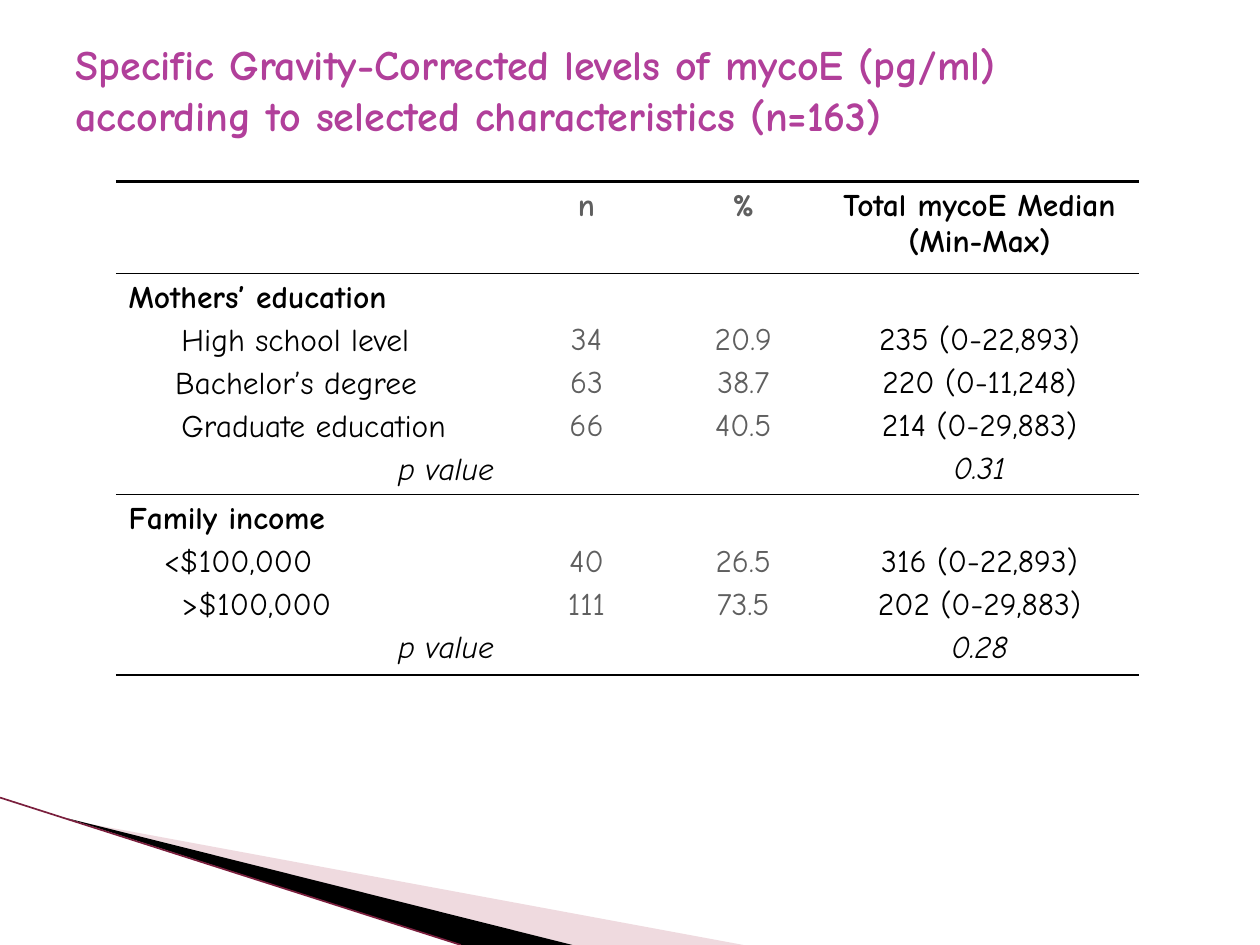
from collections import namedtuple

from lxml.etree import SubElement
from pptx import Presentation
from pptx.dml.color import RGBColor
from pptx.enum.shapes import MSO_CONNECTOR as Connector
from pptx.enum.text import MSO_ANCHOR as Anchor, PP_ALIGN as Align
from pptx.oxml.ns import qn
from pptx.util import Inches, Pt

Box = namedtuple("Box", "left top width height")
Line = namedtuple("Line", "text indent bold italic align", defaults=(0, False, False, Align.LEFT))

FONT = "Comic Neue"
BLACK, GREY, PURPLE = "000000", "5F5F5F", "B13F9A"
WIDTH, HEIGHT = Inches(10), Inches(7.5)
PARA_GAP = Pt(3.8)
CELL_PAD, LINE_PITCH = 0.05, 0.34
COLUMNS = [3.1, 1.12, 1.17, 2.69]
ROWS = [0.73, 1.96, 1.62]
COLUMN_COLORS = [BLACK, GREY, GREY, BLACK]
HEADERS = ["n", "%", "Total mycoE Median (Min-Max)"]
GROUPS = [
    (
        "Mothers’ education",
        [
            ("High school level", 0.42, "34", "20.9", "235 (0-22,893)"),
            ("Bachelor’s degree", 0.37, "63", "38.7", "220 (0-11,248)"),
            ("Graduate education", 0.42, "66", "40.5", "214 (0-29,883)"),
        ],
        "0.31",
    ),
    (
        "Family income",
        [
            ("<$100,000", 0.28, "40", "26.5", "316 (0-22,893)"),
            (">$100,000", 0.42, "111", "73.5", "202 (0-29,883)"),
        ],
        "0.28",
    ),
]


def color(value):
    return RGBColor.from_string(value)


def place(box):
    return (
        int(box.left * WIDTH),
        int(box.top * HEIGHT),
        int(box.width * WIDTH),
        int(box.height * HEIGHT),
    )


def add_span(para, text, size, shade, bold=False, italic=False):
    span = para.add_run()
    span.text = text
    span.font.name = FONT
    span.font.size = Pt(size)
    span.font.bold = bold
    span.font.italic = italic
    span.font.color.rgb = color(shade)


def add_wedge(page, box, points, shade, opacity=100):
    left, top, width, height = place(box)
    corners = [(int(left + x * width), int(top + y * height)) for x, y in points]
    builder = page.shapes.build_freeform(*corners[0])
    builder.add_line_segments(corners[1:], close=True)
    wedge = builder.convert_to_shape()
    wedge.shadow.inherit = False
    wedge.fill.solid()
    wedge.fill.fore_color.rgb = color(shade)
    wedge.line.fill.background()
    if opacity < 100:
        fill = wedge.fill._xPr.find(qn("a:solidFill"))
        SubElement(fill[0], qn("a:alpha"), val=str(opacity * 1000))


def add_swoosh(page, box):
    left, top, width, height = place(box)
    add_wedge(page, box, [(0.09, 0.15), (1, 1), (0.77, 1)], "D8A3AF", 40)
    add_wedge(page, box, [(0.09, 0.14), (0.77, 1), (0.62, 1)], BLACK)
    edge = page.shapes.add_connector(
        Connector.STRAIGHT, left, top, left + int(0.62 * width), top + height
    )
    edge.line.color.rgb = color("7A1F3D")
    edge.line.width = Pt(0.95)
    SubElement(edge._element.spPr, qn("a:effectLst"))


def add_title(page, box, text):
    title = page.shapes.title
    title.left, title.top, title.width, title.height = place(box)
    frame = title.text_frame
    frame.word_wrap = True
    frame.vertical_anchor = Anchor.MIDDLE
    para = frame.paragraphs[0]
    para.alignment = Align.LEFT
    add_span(para, text, 24, PURPLE, bold=True)


def set_borders(cell, top, bottom):
    properties = cell._tc.get_or_add_tcPr()
    for side, points in (("L", 0), ("R", 0), ("T", top), ("B", bottom)):
        edge = SubElement(properties, qn(f"a:ln{side}"), w=str(Pt(points)))
        if points:
            fill = SubElement(edge, qn("a:solidFill"))
            SubElement(fill, qn("a:srgbClr"), val=BLACK)
        else:
            SubElement(edge, qn("a:noFill"))


def fill_cell(cell, lines, shade, skipped=0):
    cell.fill.background()
    cell.margin_top = Inches(CELL_PAD + skipped * LINE_PITCH)
    frame = cell.text_frame
    for index, line in enumerate(lines):
        para = frame.add_paragraph() if index else frame.paragraphs[0]
        para.alignment = line.align
        if index:
            para.space_before = PARA_GAP
        if line.indent:
            para._p.get_or_add_pPr().set("marL", str(Inches(line.indent)))
        add_span(para, line.text, 18, shade, line.bold, line.italic)


def group_columns(heading, entries, p_value):
    labels = [Line(heading, bold=True)]
    labels += [Line(entry[0], entry[1]) for entry in entries]
    labels.append(Line("p value", italic=True, align=Align.RIGHT))
    values = [
        [Line(entry[field], align=Align.CENTER) for entry in entries] for field in (2, 3, 4)
    ]
    values[-1].append(Line(p_value, italic=True, align=Align.CENTER))
    return [labels] + values


def add_results(page, box):
    frame = page.shapes.add_table(len(ROWS), len(COLUMNS), *place(box))
    table = frame.table
    table.first_row = table.horz_banding = False
    for column, share in zip(table.columns, COLUMNS):
        column.width = int(frame.width * share / sum(COLUMNS))
    for row, share in zip(table.rows, ROWS):
        row.height = int(frame.height * share / sum(ROWS))
    header = [[]] + [[Line(text, bold=True, align=Align.CENTER)] for text in HEADERS]
    content = [header] + [group_columns(*group) for group in GROUPS]
    for row, cells in enumerate(content):
        for column, lines in enumerate(cells):
            cell = table.cell(row, column)
            set_borders(cell, 1 if row else 2.25, 1)
            fill_cell(cell, lines, COLUMN_COLORS[column], int(row > 0 and column > 0))


def main():
    deck = Presentation()
    deck.slide_width, deck.slide_height = WIDTH, HEIGHT
    page = deck.slides.add_slide(deck.slide_layouts[5])
    add_swoosh(page, Box(0, 0.844, 0.59, 0.156))
    add_title(
        page,
        Box(0.05, 0.033, 0.9, 0.123),
        "Specific Gravity-Corrected levels of mycoE (pg/ml) "
        "according to selected characteristics (n=163)",
    )
    add_results(page, Box(0.092, 0.192, 0.808, 0.575))
    deck.save("out.pptx")


if __name__ == "__main__":
    main()
